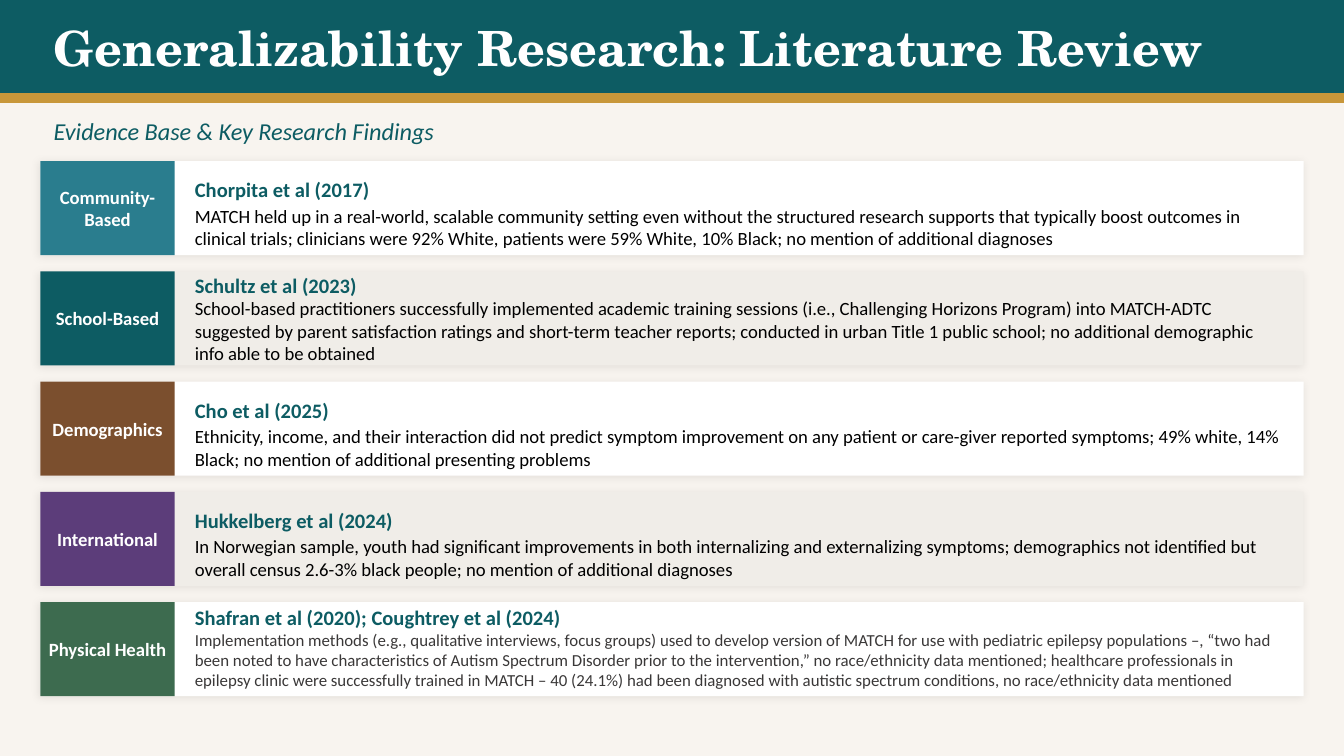
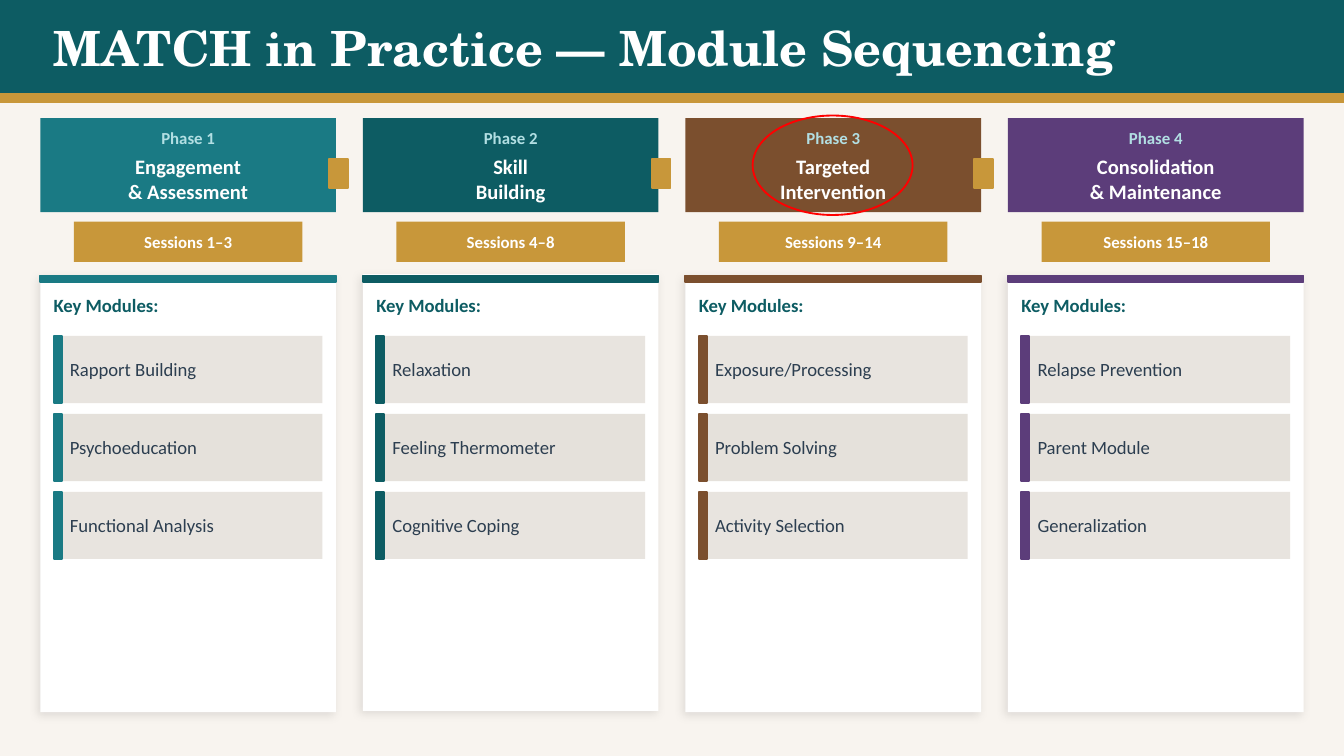
from lxml import etree
from pptx import Presentation
from pptx import util as u
from pptx.dml.color import RGBColor
from pptx.enum import shapes, text
from pptx.oxml.ns import qn

TEAL, GOLD, BROWN, PLUM = "0D5C63", "C8973A", "7B4F2E", "5C3D7A"
WHITE, BLACK, CREAM, INK = "FFFFFF", "000000", "F8F4EF", "2C3E50"
SANS, SERIF = "Calibri", "TeX Gyre Schola"
LEFT, MID = text.PP_ALIGN.LEFT, text.PP_ALIGN.CENTER
BOX, OVAL = shapes.MSO_SHAPE.RECTANGLE, shapes.MSO_SHAPE.OVAL
FRAME = dict(margin_left=0, margin_right=0, margin_top=0, margin_bottom=0,
             word_wrap=True, auto_size=text.MSO_AUTO_SIZE.NONE,
             vertical_anchor=text.MSO_ANCHOR.MIDDLE)


def rgb(code):
    return RGBColor.from_string(code)


def apply(item, values):
    for key, value in values.items():
        setattr(item, key, value)


class Deck:
    def __init__(self):
        self.prs = Presentation()
        wide = u.Inches(10)
        apply(self.prs, dict(slide_width=wide, slide_height=wide * 9 // 16))
        self.slide = None

    def page(self, title):
        self.slide = self.prs.slides.add_slide(self.prs.slide_layouts[5])
        fill = self.slide.background.fill
        fill.solid()
        fill.fore_color.rgb = rgb(CREAM)
        head = self.slide.shapes.title
        for top, high, tone in ((0, 0.7, TEAL), (0.7, 0.06, GOLD)):
            band = self.shape(0, top, 10, high, tone, tone)
            head._element.addprevious(band._element)
        spot = [u.Inches(n) for n in (0.4, 0.1, 9, 0.5)]
        apply(head, dict(zip(("left", "top", "width", "height"), spot)))
        self.letter(head, title, 26, WHITE, name=SERIF, bold=True)

    def shape(self, x, y, w, h, fill=None, line=None, kind=BOX):
        item = self.slide.shapes.add_shape(kind, *map(u.Inches, (x, y, w, h)))
        item.shadow.inherit = False
        if fill:
            item.fill.solid()
            item.fill.fore_color.rgb = rgb(fill)
        else:
            item.fill.background()
        if line:
            item.line.color.rgb = rgb(line)
            item.line.width = u.Pt(1)
        else:
            item.line.fill.background()
        return item

    def card(self, x, y, w, h, fill, alpha, blur, dist):
        props = self.shape(x, y, w, h, fill)._element.spPr
        cast = etree.SubElement(
            props.find(qn("a:effectLst")), qn("a:outerShdw"),
            blurRad=str(u.Pt(blur)), dist=str(u.Pt(dist)),
            dir=str(135 * 60000), algn="bl", rotWithShape="0")
        tone = etree.SubElement(cast, qn("a:srgbClr"), val=BLACK)
        etree.SubElement(tone, qn("a:alpha"), val=str(alpha * 1000))

    def label(self, x, y, w, h, words, size, tone, **style):
        spot = map(u.Inches, (x, y, w, h))
        self.letter(self.slide.shapes.add_textbox(*spot), words, size, tone, **style)

    def letter(self, item, words, size, tone, align=LEFT, **style):
        frame = item.text_frame
        apply(frame, FRAME)
        frame.text = words
        font = dict(name=SANS, size=u.Pt(size), bold=False) | style
        for para in frame.paragraphs:
            para.alignment = align
            for run in para.runs:
                apply(run.font, font)
                run.font.color.rgb = rgb(tone)


STUDIES = [
    ("Community-Based", "2A7D8E", "Chorpita et al (2017)", 0.06, 0.35,
     "MATCH held up in a real-world, scalable community setting even without the "
     "structured research supports that typically boost outcomes in clinical trials; "
     "clinicians were 92% White, patients were 59% White, 10% Black; no mention of "
     "additional diagnoses"),
    ("School-Based", TEAL, "Schultz et al (2023)", -0.05, 0.3,
     "School-based practitioners successfully implemented academic training sessions "
     "(i.e., Challenging Horizons Program) into MATCH-ADTC suggested by parent "
     "satisfaction ratings and short-term teacher reports; conducted in urban Title 1 "
     "public school; no additional demographic info able to be obtained"),
    ("Demographics", BROWN, "Cho et al (2025)", 0.06, 0.35,
     "Ethnicity, income, and their interaction did not predict symptom improvement on "
     "any patient or care-giver reported symptoms; 49% white, 14% Black; no mention of "
     "additional presenting problems"),
    ("International", PLUM, "Hukkelberg et al (2024)", 0.06, 0.35,
     "In Norwegian sample, youth had significant improvements in both internalizing and "
     "externalizing symptoms; demographics not identified but overall census 2.6-3% "
     "black people; no mention of additional diagnoses"),
    ("Physical Health", "3D6B4F", "Shafran et al (2020); Coughtrey et al (2024)",
     -0.04, 0.29,
     "Implementation methods (e.g., qualitative interviews, focus groups) used to develop "
     "version of MATCH for use with pediatric epilepsy populations –, “two had been noted "
     "to have characteristics of Autism Spectrum Disorder prior to the intervention,” no "
     "race/ethnicity data mentioned; healthcare professionals in epilepsy clinic were "
     "successfully trained in MATCH – 40 (24.1%) had been diagnosed with autistic spectrum "
     "conditions, no race/ethnicity data mentioned"),
]

PHASES = [
    ("Engagement\n& Assessment", "1–3", "1A7A84",
     ("Rapport Building", "Psychoeducation", "Functional Analysis")),
    ("Skill\nBuilding", "4–8", TEAL,
     ("Relaxation", "Feeling Thermometer", "Cognitive Coping")),
    ("Targeted\nIntervention", "9–14", BROWN,
     ("Exposure/Processing", "Problem Solving", "Activity Selection")),
    ("Consolidation\n& Maintenance", "15–18", PLUM,
     ("Relapse Prevention", "Parent Module", "Generalization")),
]


def review(deck):
    deck.page("Generalizability Research: Literature Review")
    deck.label(0.4, 0.82, 9, 0.3, "Evidence Base & Key Research Findings", 13, TEAL,
               italic=True)
    for row, (field, tone, cite, rise, drop, notes) in enumerate(STUDIES):
        y = 1.2 + 0.82 * row
        deck.card(0.3, y, 9.4, 0.7, "F0EDE8" if row % 2 else WHITE, 7, 4, 1)
        tag = deck.shape(0.3, y, 1, 0.7, tone)
        deck.letter(tag, field, 10, WHITE, MID, bold=True)
        last = row == len(STUDIES) - 1
        deck.label(1.45, y + rise, 2.92 if last else 2.2, 0.3, cite, 11, TEAL, bold=True)
        size, ink = (9, "3A3838") if last else (10, BLACK)
        deck.label(1.45, y + drop, 8.1, 0.28, notes, size, ink)


def phase(deck, x, count, name, span, tone, mods):
    deck.shape(x, 0.88, 2.2, 0.7, tone)
    deck.label(x, 0.9, 2.2, 0.25, f"Phase {count}", 9, "B2DFE3", align=MID, bold=True)
    deck.label(x, 1.12, 2.2, 0.42, name, 11, WHITE, align=MID, bold=True)
    pill = deck.shape(x + 0.25, 1.65, 1.7, 0.3, GOLD)
    deck.letter(pill, f"Sessions {span}", 9, WHITE, MID, bold=True)
    deck.card(x, 2.04 if count == 2 else 2.05, 2.2, 3.25, WHITE, 10, 5, 2)
    deck.shape(x, 2.05, 2.2, 0.05, tone, tone)
    deck.label(x + 0.1, 2.12, 2, 0.3, "Key Modules:", 10, TEAL, bold=True)
    for row, mod in enumerate(mods):
        y = 2.5 + 0.58 * row
        deck.shape(x + 0.1, y, 2, 0.5, "E5E1DB" if row % 2 else "E8E4DF")
        deck.shape(x + 0.1, y, 0.06, 0.5, tone, tone)
        deck.label(x + 0.22, y, 1.85, 0.5, mod, 10, INK)


def practice(deck):
    deck.page("MATCH in Practice — Module Sequencing")
    lefts = [0.3 + 2.4 * col for col in range(len(PHASES))]
    for count, (x, item) in enumerate(zip(lefts, PHASES), 1):
        phase(deck, x, count, *item)
    for x in lefts[:-1]:
        deck.shape(x + 2.15, 1.18, 0.14, 0.22, GOLD, GOLD)
    deck.shape(5.6, 0.86, 1.19, 0.74, line="FF0000", kind=OVAL)


def main():
    deck = Deck()
    review(deck)
    practice(deck)
    deck.prs.save("out.pptx")


if __name__ == "__main__":
    main()
